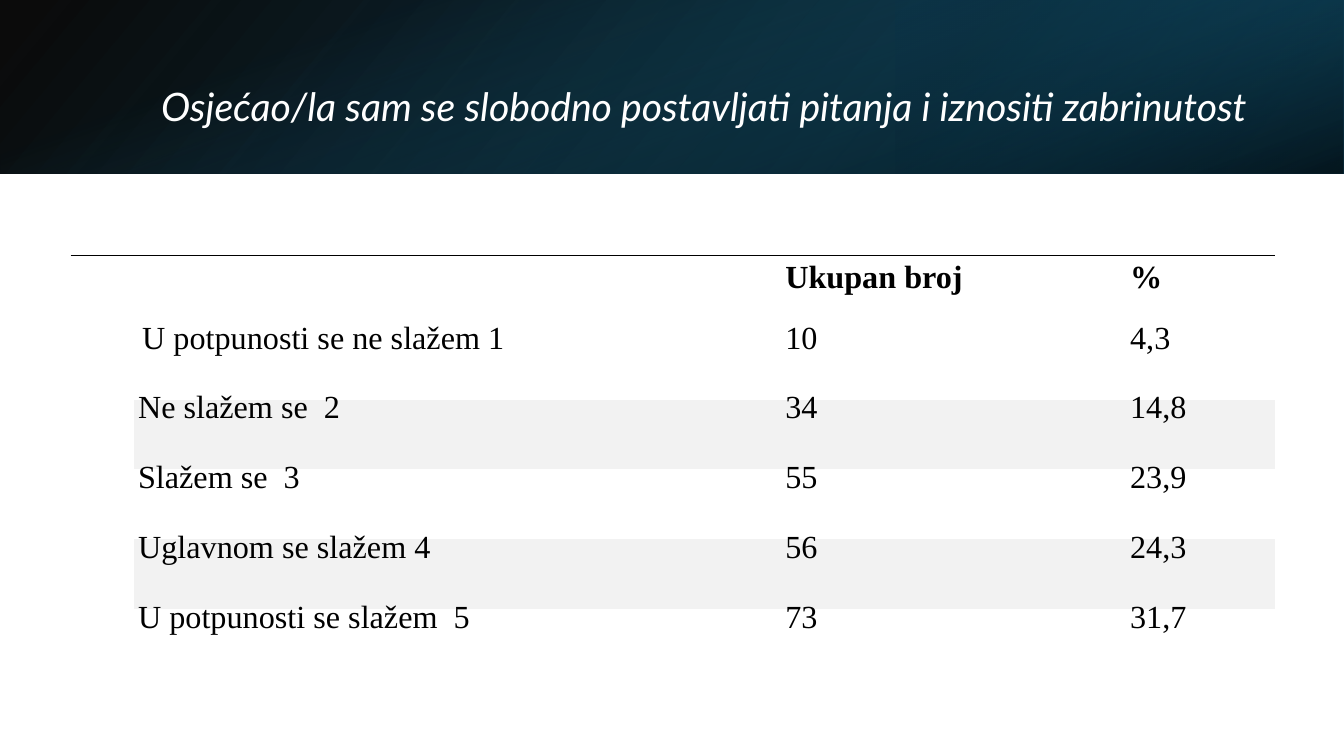
"""Builds a slide with a gradient title band and a table of survey answers."""
from lxml import etree
from pptx import Presentation
from pptx.dml.color import RGBColor
from pptx.enum import shapes, text
from pptx.oxml import parse_xml
from pptx.oxml.ns import nsdecls, qn
from pptx.util import Cm, Pt

BLACK = RGBColor(0x00, 0x00, 0x00)
WHITE = RGBColor(0xFF, 0xFF, 0xFF)
DEEP_BLUE = RGBColor(0x10, 0x48, 0x62)
DARK_BLUE = RGBColor(0x0B, 0x30, 0x41)
TEAL = RGBColor(0x15, 0x60, 0x82)
BAND_GREY = RGBColor(0xF2, 0xF2, 0xF2)
NO_STYLE = "{2D5ABB26-0587-4C30-8999-92F81FD0307C}"
BAND_H = 4.37

prs = Presentation()
prs.slide_width, prs.slide_height = Cm(33.87), Cm(19.05)
s = prs.slides.add_slide(prs.slide_layouts[6])

layers = [
    ((0, 0, 33.87, BAND_H), 0, True, 140, [(0, BLACK, 96), (100, DEEP_BLUE, 100)]),
    ((22.58, 0, 11.29, BAND_H), 180, True, 320, [(19, DARK_BLUE, 68), (100, TEAL, 79)]),
    ((14.75, -14.75, BAND_H, 33.87), 90, False, 340, [(23, TEAL, 0), (99, BLACK, 74)]),
]
for box, rotation, flipped, angle, stops in layers:
    sp = s.shapes.add_shape(shapes.MSO_SHAPE.RECTANGLE, *map(Cm, box))
    sp.shadow.inherit = False
    sp.line.fill.background()
    sp.rotation = rotation
    if flipped:
        sp._element.spPr.xfrm.set("flipH", "1")
    sp.fill.gradient()
    sp.fill.gradient_angle = 360 - angle
    for stop, (position, color, alpha) in zip(sp.fill.gradient_stops, stops):
        stop.position = position / 100
        stop.color.rgb = color
        rgb = stop._gs.find(qn("a:srgbClr"))
        etree.SubElement(rgb, qn("a:alpha")).set("val", str(alpha * 1000))

tf = s.shapes.add_textbox(Cm(3.81), Cm(1.52), Cm(28.3), Cm(2.44)).text_frame
tf.word_wrap = True
tf.vertical_anchor = text.MSO_ANCHOR.MIDDLE
p = tf.paragraphs[0]
p.text = "Osjećao/la sam se slobodno postavljati pitanja i iznositi zabrinutost"
p.line_spacing = 0.9
p.font.name, p.font.size, p.font.italic = "Lato", Pt(28), True
p.font.color.rgb = WHITE

answers = [
    ("", "Ukupan broj", "%"),
    (" U potpunosti se ne slažem 1", "10", "4,3"),
    ("Ne slažem se  2", "34", "14,8"),
    ("Slažem se  3", "55", "23,9"),
    ("Uglavnom se slažem 4", "56", "24,3"),
    ("U potpunosti se slažem  5", "73", "31,7"),
]
frame = s.shapes.add_table(len(answers), 4, Cm(1.78), Cm(6.43), Cm(30.35), Cm(10.7))
table = frame.table
table.first_row = table.horz_banding = False
table._tbl.tblPr.find(qn("a:tableStyleId")).text = NO_STYLE
for column, width in zip(table.columns, (1.6, 16.31, 8.69, 3.75)):
    column.width = Cm(width)
for i, row in enumerate(table.rows):
    row.height = Cm(1.76 if i else 1.88)

for i, answer in enumerate(answers):
    for j, value in enumerate(("",) + answer):
        cell = table.cell(i, j)
        if j and i in (2, 4):
            cell.fill.solid()
            cell.fill.fore_color.rgb = BAND_GREY
        else:
            cell.fill.background()
        if i == 0:
            cell._tc.get_or_add_tcPr().insert(0, parse_xml(
                f'<a:lnT {nsdecls("a")} w="6350"><a:solidFill>'
                f'<a:srgbClr val="{BLACK}"/></a:solidFill></a:lnT>'))
        if not value:
            continue
        cell.margin_left, cell.margin_top = Cm(0), Cm(0.1)
        cell.margin_right, cell.margin_bottom = Cm(0.28), Cm(0.86)
        cell.vertical_anchor = text.MSO_ANCHOR.TOP if i else text.MSO_ANCHOR.BOTTOM
        p = cell.text_frame.paragraphs[0]
        p.text = value
        p.alignment = text.PP_ALIGN.JUSTIFY
        p.line_spacing = Pt(16)
        if not value.startswith(" "):
            p._p.get_or_add_pPr().set("marL", str(Cm(0.1)))
        p.font.name, p.font.size, p.font.bold = "Times New Roman", Pt(23), i == 0
        p.font.color.rgb = BLACK

table.cell(0, 0).merge(table.cell(0, 1))
table.cell(1, 0).merge(table.cell(5, 0))

prs.save("out.pptx")
